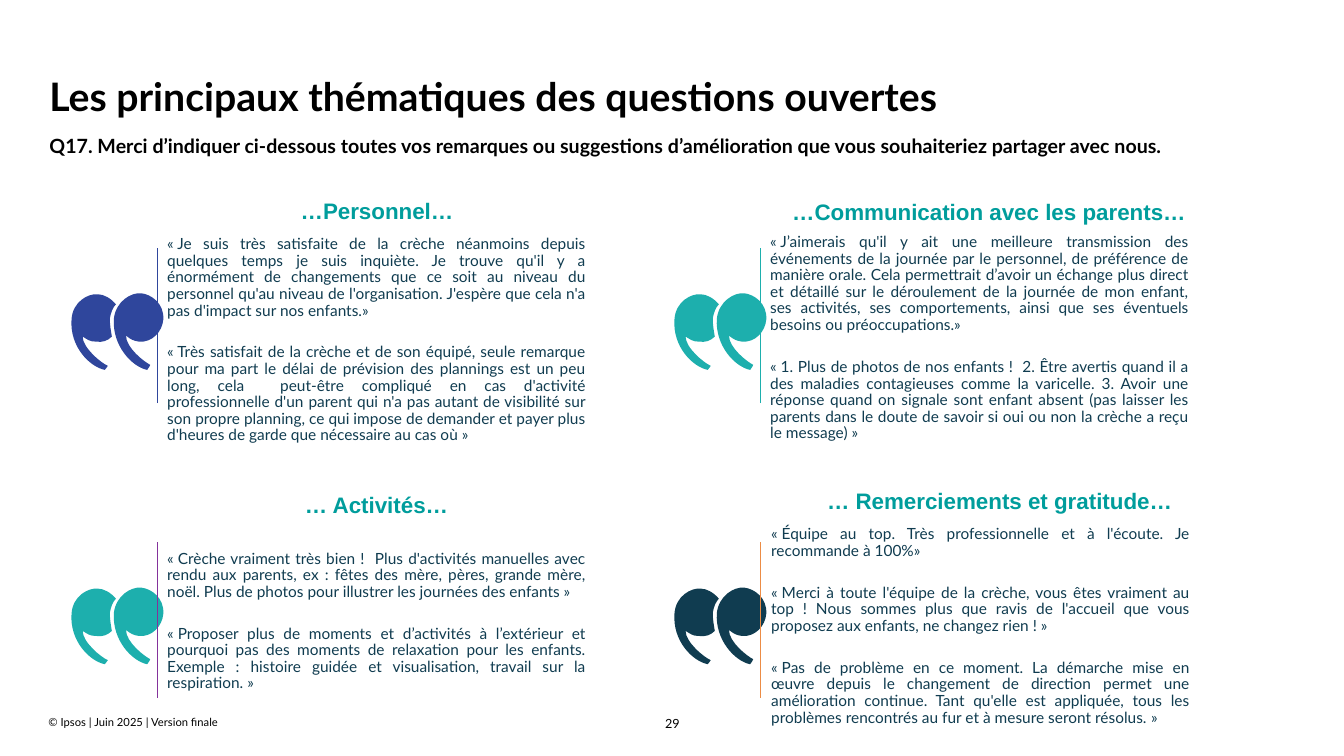
from pptx import Presentation
from pptx.dml.color import RGBColor
from pptx.enum.shapes import MSO_CONNECTOR
from pptx.enum.text import MSO_ANCHOR, MSO_AUTO_SIZE, PP_ALIGN
from pptx.oxml.ns import qn
from pptx.util import Pt
from lxml import etree

PX = 9144  # 100 px to the inch
HARD = chr(160)  # no-break space
TOP, MIDDLE, BOTTOM = MSO_ANCHOR.TOP, MSO_ANCHOR.MIDDLE, MSO_ANCHOR.BOTTOM
LEFT, CENTER, JUSTIFY = PP_ALIGN.LEFT, PP_ALIGN.CENTER, PP_ALIGN.JUSTIFY
STRAIGHT = MSO_CONNECTOR.STRAIGHT
NONE = MSO_AUTO_SIZE.NONE

# Theme: colours and type styles
THEME = {
    "blue": "2F469C", "teal": "1DAFAD", "navy": "103C50",
    "purple": "84329B", "orange": "EC8C45",
    "title": dict(font="Lato", size=28, bold=True, color="000000",
                  anchor=TOP, inset=(0, 0), para=dict(alignment=LEFT, line_spacing=0.9)),
    "question": dict(font="Lato", size=14, bold=True, color="000000",
                     anchor=TOP, inset=(0, 0), para=dict(alignment=LEFT)),
    "head": dict(font="Arial", size=16, bold=True, color="009D9C",
                 anchor=MIDDLE, inset=(10, 5), para=dict(alignment=CENTER)),
    "quote": dict(font="Lato", size=11, bold=False, color="103C50",
                  anchor=MIDDLE, inset=(10, 5), para=dict(alignment=JUSTIFY, line_spacing=0.9)),
    "footer": dict(font="Lato", size=8, bold=False, color="000000",
                   anchor=BOTTOM, inset=(0, 0), para=dict(alignment=LEFT)),
    "page": dict(font="Lato", size=9, bold=False, color="000000",
                 anchor=TOP, inset=(0, 0), para=dict(alignment=CENTER, line_spacing=1.1)),
}

deck = Presentation()
deck.slide_width, deck.slide_height = 1333 * PX, 750 * PX
slide = deck.slides.add_slide(deck.slide_layouts[5])
shapes = slide.shapes


def write(place, texts, kind, shape=None):
    """Put paragraphs in a text box, or in the given shape."""
    style = THEME[kind]
    left, top, width, height = [n * PX for n in place]
    if shape is None:
        shape = shapes.add_textbox(left, top, width, height)
    wide, high = [n * PX for n in style["inset"]]
    form = dict(word_wrap=True, auto_size=NONE, vertical_anchor=style["anchor"],
                margin_left=wide, margin_right=wide, margin_top=high, margin_bottom=high)
    for key, value in dict(left=left, top=top, width=width, height=height).items():
        setattr(shape, key, value)
    frame = shape.text_frame
    for key, value in form.items():
        setattr(frame, key, value)
    for i, text in enumerate(texts):
        para = frame.add_paragraph() if i else frame.paragraphs[0]
        for key, value in style["para"].items():
            setattr(para, key, value)
        para.space_before = Pt(18 if i else 0)
        run = para.add_run()
        run.text = text
        for key, value in dict(name=style["font"], size=Pt(style["size"]),
                               bold=style["bold"]).items():
            setattr(run.font, key, value)
        run.font.color.rgb = RGBColor.from_string(style["color"])


def bend(shape):
    """Join each three line steps of an outline into one cubic curve."""
    steps = list(shape._element.iter(qn("a:lnTo")))
    for i in range(0, len(steps), 3):
        curve = etree.Element(qn("a:cubicBezTo"))
        steps[i].addprevious(curve)
        for step in steps[i:i + 3]:
            curve.append(step[0])
            step.getparent().remove(step)


# Title, question and footer
write((49, 77, 1236, 78), ["Les principaux thématiques des questions ouvertes"],
      "title", shapes.title)
write((49, 133, 1125, 24),
      ["Q17. Merci d’indiquer ci-dessous toutes vos remarques ou suggestions "
       "d’amélioration que vous souhaiteriez partager avec nous."], "question")
write((48, 710, 511, 13), ["© Ipsos | Juin 2025 | Version finale"], "footer")
write((640, 709, 54, 15), ["29"], "page")

# The two halves of the quote mark in the top left block: start, then three points a curve
MARKS = [
    [(111, 334),
     (107, 338), (102, 340), (95, 339), (89, 339), (87, 337), (82, 334),
     (82, 345), (100, 360), (107, 363), (107, 363), (105, 366), (104, 367),
     (89, 364), (69, 344), (71, 317), (72, 299), (88, 291), (97, 292),
     (103, 292), (110, 296), (115, 302), (112, 305), (110, 310), (109, 316),
     (109, 323), (110, 328), (111, 334)],
    [(162, 317),
     (161, 329), (151, 340), (138, 339), (132, 338), (130, 337), (125, 333),
     (125, 345), (143, 359), (149, 362), (149, 362), (148, 365), (146, 367),
     (131, 364), (111, 343), (113, 316), (115, 299), (130, 290), (140, 291),
     (150, 292), (163, 301), (162, 317)],
]

# Blocks: column, row, mark colour, line colour, heading, quotes
BLOCKS = [
    (0, 0, "blue", "blue", (147, 183, 454, 51), "…Personnel…", (156, 268, 435, 139), [
        "Je suis très satisfaite de la crèche néanmoins depuis quelques temps je suis "
        "inquiète. Je trouve qu'il y a énormément de changements que ce soit au niveau du "
        "personnel qu'au niveau de l'organisation. J'espère que cela n'a pas d'impact sur "
        "nos enfants.»",
        "Très satisfait de la crèche et de son équipé, seule remarque pour ma part le "
        "délai de prévision des plannings est un peu long, cela  peut-être compliqué en cas "
        "d'activité professionnelle d'un parent qui n'a pas autant de visibilité sur son "
        "propre planning, ce qui impose de demander et payer plus d'heures de garde que "
        "nécessaire au cas où »"]),
    (1, 0, "teal", "teal", (754, 184, 454, 51), "…Communication avec les parents…",
     (754, 266, 435, 139), [
        "J’aimerais qu'il y ait une meilleure transmission des événements de la journée "
        "par le personnel, de préférence de manière orale. Cela permettrait d’avoir un "
        "échange plus direct et détaillé sur le déroulement de la journée de mon enfant, "
        "ses activités, ses comportements, ainsi que ses éventuels besoins ou "
        "préoccupations.»",
        "1. Plus de photos de nos enfants !  2. Être avertis quand il a des maladies "
        "contagieuses comme la varicelle. 3. Avoir une réponse quand on signale sont enfant "
        "absent (pas laisser les parents dans le doute de savoir si oui ou non la crèche a "
        "reçu le message) »"]),
    (0, 1, "teal", "purple", (185, 475, 377, 51), "… Activités…", (156, 547, 435, 139), [
        "Crèche vraiment très bien !  Plus d'activités manuelles avec rendu aux parents, "
        "ex : fêtes des mère, pères, grande mère, noël. Plus de photos pour illustrer les "
        "journées des enfants »",
        "Proposer plus de moments et d’activités à l’extérieur et pourquoi pas des "
        "moments de relaxation pour les enfants. Exemple : histoire guidée et "
        f"visualisation, travail sur la respiration.{HARD}»"]),
    (1, 1, "navy", "orange", (745, 471, 493, 51), "… Remerciements et gratitude…",
     (755, 552, 435, 139), [
        "Équipe au top. Très professionnelle et à l'écoute. Je recommande à 100%»",
        "Merci à toute l'équipe de la crèche, vous êtes vraiment au top ! Nous sommes "
        "plus que ravis de l'accueil que vous proposez aux enfants, ne changez rien ! »",
        "Pas de problème en ce moment. La démarche mise en œuvre depuis le changement de "
        "direction permet une amélioration continue. Tant qu'elle est appliquée, tous les "
        f"problèmes rencontrés au fur et à mesure seront résolus.{HARD}»"]),
]

for col, row, fill, edge, spot, head, place, quotes in BLOCKS:
    right, down = col * 598, row * 292

    # Quote mark
    group = shapes.add_group_shape()
    for mark in MARKS:
        points = [((x + right) * PX, (y + down) * PX) for x, y in mark]
        pen = group.shapes.build_freeform(*points[0])
        pen.add_line_segments(points[1:], close=True)
        half = pen.convert_to_shape()
        bend(half)
        half.shadow.inherit = False
        half.fill.solid()
        half.fill.fore_color.rgb = RGBColor.from_string(THEME[fill])
        half.line.fill.background()

    # Upright line
    x = (156 + right) * PX
    line = shapes.add_connector(STRAIGHT, x, (400 + down) * PX, x, (246 + down) * PX)
    line.line.color.rgb = RGBColor.from_string(THEME[edge])
    line.line.width = Pt(1)
    etree.SubElement(line._element.spPr, qn("a:effectLst"))

    # Heading and quotes
    write(spot, [head], "head")
    write(place, [f"«{HARD}{quote}" for quote in quotes], "quote")

deck.save("out.pptx")
